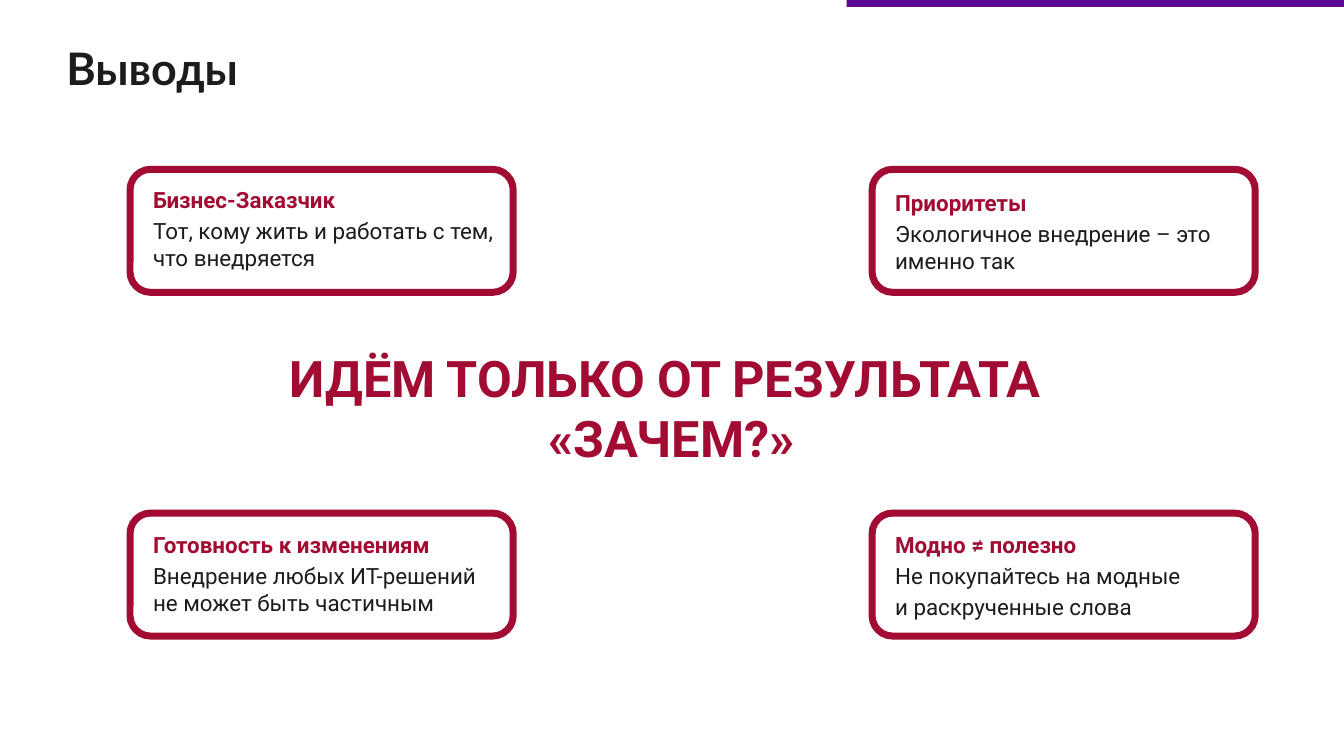
from pptx import Presentation
from pptx import util as u
from pptx.dml.color import RGBColor
from pptx.enum import shapes, text

PURPLE = RGBColor(0x5C, 0x08, 0x95)
CRIMSON = RGBColor(0xA2, 0x0C, 0x33)
INK = RGBColor(0x1C, 0x1C, 0x1C)

WIDTH, HEIGHT = 13.33, 7.5
COLUMNS = (1.29, 8.65)
ROWS = (1.68, 5.09)
CARD_W, CARD_H = 3.8, 1.22
PAD = 0.13

# column, row, text width, text offset from the card top, heading, body paragraphs
CARDS = [
    (0, 0, 3.8, 0.12, "Бизнес-Заказчик",
     ["Тот, кому жить и работать с тем, что внедряется"]),
    (1, 0, 3.57, 0.15, "Приоритеты",
     ["Экологичное внедрение – это именно так"]),
    (0, 1, 3.68, PAD, "Готовность к изменениям",
     ["Внедрение любых ИТ-решений не может быть частичным"]),
    (1, 1, 3.57, PAD, "Модно ≠ полезно",
     ["Не покупайтесь на модные", "и раскрученные слова"]),
]


def inches(*lengths):
    return [u.Inches(n) for n in lengths]


def add_text(s, box, lines, size, font="Roboto", align=None, space_after=None,
             line_spacing=None):
    """Add a text box; each line is (wording, colour, bold)."""
    tf = s.shapes.add_textbox(*inches(*box)).text_frame
    tf.word_wrap = True
    tf.vertical_anchor = text.MSO_ANCHOR.TOP
    for i, (wording, colour, bold) in enumerate(lines):
        p = tf.add_paragraph() if i else tf.paragraphs[0]
        p.alignment = align
        p.space_after = space_after
        p.line_spacing = line_spacing
        r = p.add_run()
        r.text = wording
        r.font.name = font
        r.font.size = u.Pt(size)
        r.font.bold = bold
        r.font.color.rgb = colour
    return tf


def add_bar(s):
    left = WIDTH * 0.63
    sp = s.shapes.add_shape(shapes.MSO_SHAPE.RECTANGLE,
                            *inches(left, 0, WIDTH - left, 0.07))
    sp.shadow.inherit = False
    sp.fill.solid()
    sp.fill.fore_color.rgb = PURPLE
    sp.line.fill.background()


def add_slogan(s):
    tf = add_text(s, (2.22, 3.31, 8.88, 1.34),
                  [("ИДЁМ ТОЛЬКО ОТ РЕЗУЛЬТАТА ", CRIMSON, True),
                   ("«ЗАЧЕМ?»", CRIMSON, True)],
                  36, align=text.PP_ALIGN.CENTER)
    tf.margin_left = tf.margin_right = tf.margin_bottom = 0
    tf.margin_top = u.Inches(0.13)


def add_card(s, column, row, text_w, text_dy, heading, body):
    left, top = COLUMNS[column], ROWS[row]
    lines = [(heading, CRIMSON, True)] + [(line, INK, False) for line in body]
    add_text(s, (left + PAD, top + text_dy, text_w, 0.95), lines, 16,
             space_after=u.Pt(3))
    sp = s.shapes.add_shape(shapes.MSO_SHAPE.ROUNDED_RECTANGLE,
                            *inches(left, top, CARD_W, CARD_H))
    sp.shadow.inherit = False
    sp.fill.background()
    sp.line.color.rgb = CRIMSON
    sp.line.width = u.Pt(5)


def main():
    prs = Presentation()
    prs.slide_width, prs.slide_height = inches(WIDTH, HEIGHT)
    s = prs.slides.add_slide(prs.slide_layouts[6])
    add_bar(s)
    add_text(s, (0.56, 0.42, 12.52, 0.66), [("Выводы", INK, True)], 32,
             font="Lato", line_spacing=0.9)
    add_slogan(s)
    for card in CARDS:
        add_card(s, *card)
    prs.save("out.pptx")


if __name__ == "__main__":
    main()
